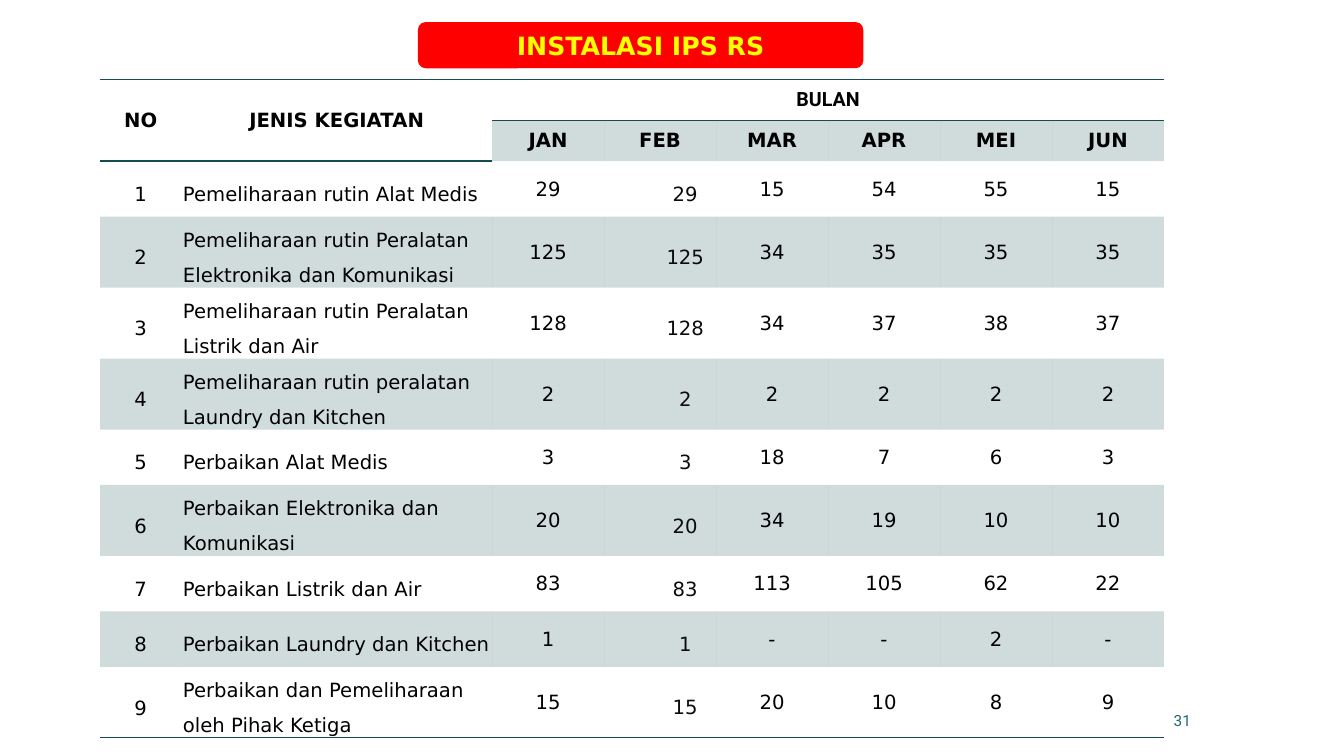
from lxml.etree import SubElement
from pptx import Presentation
from pptx.dml.color import RGBColor
from pptx.enum.shapes import MSO_SHAPE as Shape
from pptx.enum.text import MSO_ANCHOR as Anchor, PP_ALIGN as Align
from pptx.oxml import parse_xml
from pptx.oxml.ns import nsdecls, qn
from pptx.util import Pt

# Content
TITLE = "INSTALASI IPS RS"
PAGE = "31"
HEADS = ["NO", "JENIS KEGIATAN", "BULAN"]
MONTHS = ["JAN", "FEB", "MAR", "APR", "MEI", "JUN"]
TASKS = [
    ("Pemeliharaan rutin Alat Medis", 29, 29, 15, 54, 55, 15),
    ("Pemeliharaan rutin Peralatan Elektronika dan Komunikasi",
     125, 125, 34, 35, 35, 35),
    ("Pemeliharaan rutin Peralatan Listrik dan Air",
     128, 128, 34, 37, 38, 37),
    ("Pemeliharaan rutin peralatan Laundry dan Kitchen", 2, 2, 2, 2, 2, 2),
    ("Perbaikan Alat Medis", 3, 3, 18, 7, 6, 3),
    ("Perbaikan Elektronika dan Komunikasi", 20, 20, 34, 19, 10, 10),
    ("Perbaikan Listrik dan Air", 83, 83, 113, 105, 62, 22),
    ("Perbaikan Laundry dan Kitchen", 1, 1, "-", "-", 2, "-"),
    ("Perbaikan dan Pemeliharaan oleh Pihak Ketiga", 15, 15, 20, 10, 8, 9),
]

# Style
BLACK = RGBColor(0, 0, 0)
SOFT = RGBColor(0x0C, 0x0C, 0x0C)
TEAL = RGBColor(0x16, 0x4B, 0x4F)
BLUE = RGBColor(0x1F, 0x69, 0x6F)
RED = RGBColor(0xFF, 0, 0)
YELLOW = RGBColor(0xFF, 0xFF, 0)
SANS, ROBOTO = "DejaVu Sans", "Roboto"
NO_GRID = "{2D5ABB26-0587-4C30-8999-92F81FD0307C}"

# Cell insets: left, top, right, bottom
HEAD_IN = (14.4, 5.76, 14.4, 5.76)
NAME_IN = (1.2, 0.3, 1.2, 0)
NUM_IN = (0.72, 0.72, 0.72, 0)
FEB_IN = (5.04, 0, 5.04, 0)

# Table sizes
COLS = [58, 222] + [80] * len(MONTHS)
ROWS = [29.3, 28.9] + [39.6] * len(TASKS)
NO, NAME, JAN, FEB = range(4)
LAST = len(ROWS) - 1


def style(para, size, color, font=SANS, bold=False, align=Align.CENTER):
    para.alignment = align
    for run in para.runs:
        run.font.size = Pt(size)
        run.font.name = font
        run.font.bold = bold
        run.font.color.rgb = color


def fill_cell(cell, text, inset, color=BLACK, gap=None, **look):
    cell.text_frame.text = str(text)
    cell.vertical_anchor = Anchor.MIDDLE
    (cell.margin_left, cell.margin_top,
     cell.margin_right, cell.margin_bottom) = map(Pt, inset)
    para = cell.text_frame.paragraphs[0]
    style(para, 14, color, **look)
    if gap:
        para.line_spacing = gap
    return para


def shade(cell):
    cell.fill.solid()
    cell.fill.fore_color.rgb = TEAL
    tone = cell._tc.tcPr.find(qn("a:solidFill") + "/" + qn("a:srgbClr"))
    SubElement(tone, qn("a:alpha")).set("val", "20000")


def rule(cell, *sides):
    # Bottom goes in first so that top ends up ahead of it
    for side in sorted(sides):
        cell._tc.get_or_add_tcPr().insert(0, parse_xml(
            f'<a:ln{side} {nsdecls("a")} w="{Pt(1)}"><a:solidFill>'
            f'<a:srgbClr val="{TEAL}"/></a:solidFill></a:ln{side}>'))


deck = Presentation()
deck.slide_width, deck.slide_height = Pt(960), Pt(540)
slide = deck.slides.add_slide(deck.slide_layouts[6])

# Page number
box = slide.shapes.add_textbox(Pt(633.6), Pt(500.4), Pt(224.2), Pt(28.8))
box.text_frame.word_wrap = True
box.text_frame.vertical_anchor = Anchor.MIDDLE
box.text_frame.text = PAGE
style(box.text_frame.paragraphs[0], 11, BLUE, ROBOTO, align=Align.RIGHT)

# Table frame
frame = slide.shapes.add_table(len(ROWS), len(COLS), Pt(71.5), Pt(56.9),
                               Pt(sum(COLS)), Pt(sum(ROWS)))
table = frame.table
table.first_row = table.horz_banding = False
frame.element.find(".//" + qn("a:tableStyleId")).text = NO_GRID
for col, width in zip(table.columns, COLS):
    col.width = Pt(width)
for row, height in zip(table.rows, ROWS):
    row.height = Pt(height)

# Header rows
for c, head in enumerate(HEADS):
    fill_cell(table.cell(0, c), head, HEAD_IN, bold=True,
              font=ROBOTO if c == JAN else SANS)
for c, month in enumerate(MONTHS, JAN):
    fill_cell(table.cell(1, c), month, HEAD_IN, bold=True)
    shade(table.cell(1, c))

# Task rows
for r, (name, *counts) in enumerate(TASKS, 2):
    fill_cell(table.cell(r, NO), r - 1, NAME_IN, gap=1.5)
    fill_cell(table.cell(r, NAME), name, NAME_IN, gap=1.5, align=Align.LEFT)
    for c, count in enumerate(counts, JAN):
        cell = table.cell(r, c)
        if c == FEB:
            para = fill_cell(cell, count, FEB_IN, SOFT, gap=1.5)
            para._p.get_or_add_pPr().set("marL", str(Pt(36)))
        else:
            fill_cell(cell, count, NUM_IN)
    if r % 2:
        for c in range(len(COLS)):
            shade(table.cell(r, c))

# Rules and merged headers
for c in range(len(COLS)):
    rule(table.cell(0, c), "T", "B")
    rule(table.cell(LAST, c), "B")
for c in (NO, NAME):
    rule(table.cell(1, c), "B")
    table.cell(0, c).merge(table.cell(1, c))
table.cell(0, JAN).merge(table.cell(0, len(COLS) - 1))

# Title banner
banner = slide.shapes.add_shape(Shape.ROUNDED_RECTANGLE,
                                Pt(298.5), Pt(15.8), Pt(318.2), Pt(33))
banner.shadow.inherit = False
banner.fill.solid()
banner.fill.fore_color.rgb = RED
banner.line.fill.background()
banner.text_frame.text = TITLE
banner.text_frame.vertical_anchor = Anchor.MIDDLE
style(banner.text_frame.paragraphs[0], 18, YELLOW, bold=True)

deck.save("out.pptx")
